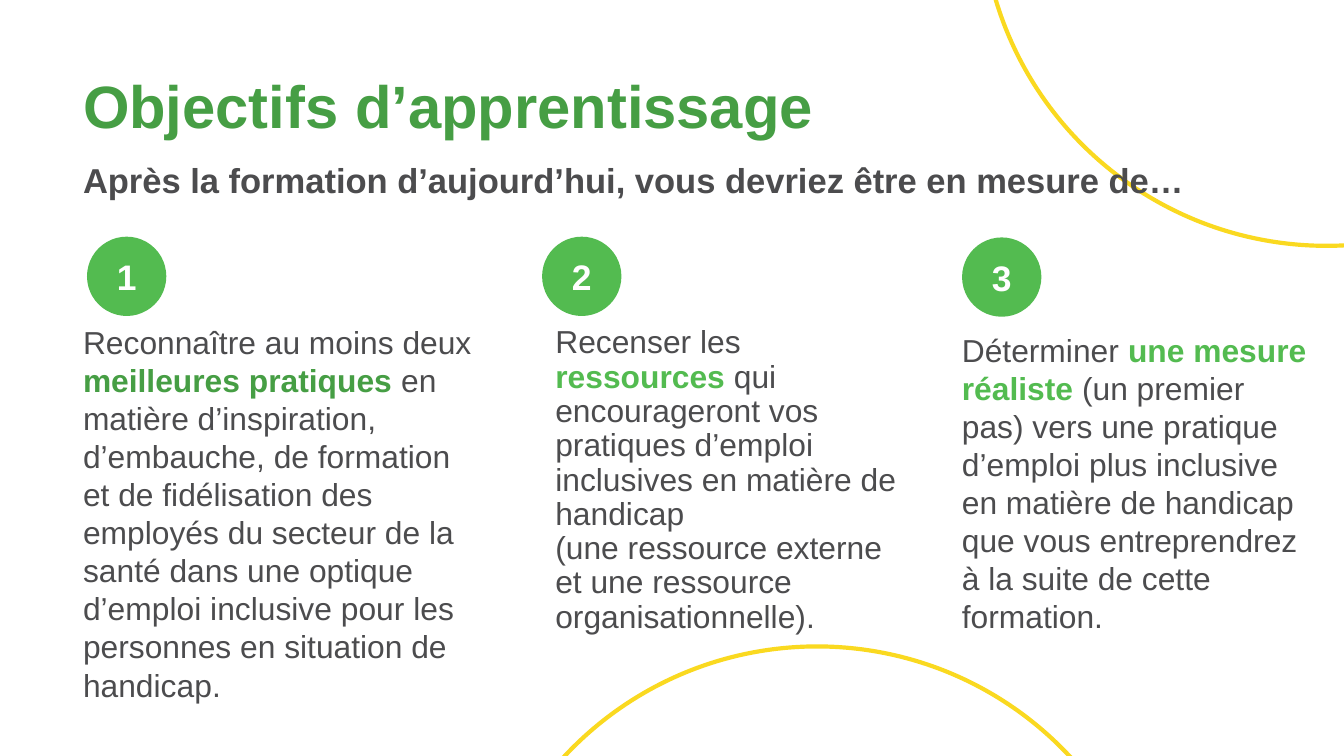
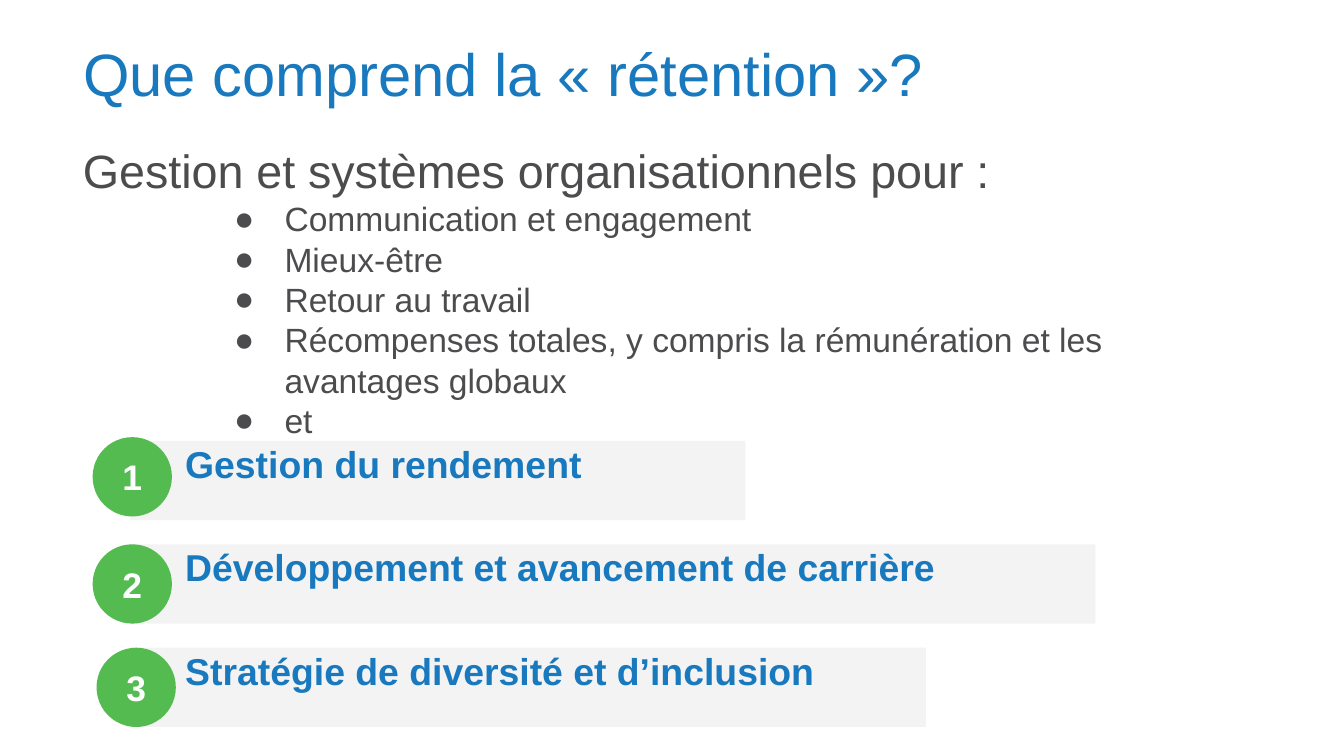
from dataclasses import dataclass

from lxml.etree import SubElement
from pptx import Presentation
from pptx.dml.color import RGBColor as Color
from pptx.enum.shapes import MSO_SHAPE as Preset
from pptx.enum.text import MSO_ANCHOR as Anchor, PP_ALIGN as Align
from pptx.oxml.ns import qn
from pptx.util import Pt


@dataclass(frozen=True)
class Theme:
    font: str = "Arial"
    green: str = "469E44"
    light_green: str = "53BB50"
    blue: str = "1979BE"
    grey: str = "4C4C4E"
    band: str = "F3F3F3"
    yellow: str = "FAD920"
    white: str = "FFFFFF"
    title_size: float = 32
    subtitle_size: float = 18.5
    column_size: float = 17
    lead_size: float = 25
    bullet_size: float = 18
    label_size: float = 20
    number_size: float = 19


THEME = Theme()
LEFT = 37.4
BADGE = 42.5
RING = 370
ROW_TOP, ROW_STEP = 236.2, 55.4
TITLE_LINE = 34.6


# Text helpers
def set_values(target, values):
    for name, value in values.items():
        setattr(target, name, value)


def add_run(paragraph, text, size, color, bold=False):
    for index, line in enumerate(text.split("\n")):
        if index:
            paragraph.add_line_break()
        run = paragraph.add_run()
        run.text = line
        set_values(run.font, {"name": THEME.font, "size": Pt(size), "bold": bold})
        run.font.color.rgb = Color.from_string(color)


def set_frame(frame, margins, anchor=Anchor.TOP):
    left, top, right, bottom = map(Pt, margins)
    set_values(frame, {
        "word_wrap": True, "vertical_anchor": anchor,
        "margin_left": left, "margin_top": top,
        "margin_right": right, "margin_bottom": bottom,
    })


def add_bullet(paragraph, color):
    properties = paragraph._p.get_or_add_pPr()
    properties.set("marL", str(Pt(108)))
    properties.set("indent", str(Pt(-27)))
    bullet_color = SubElement(properties, qn("a:buClr"))
    SubElement(bullet_color, qn("a:srgbClr"), val=color)
    SubElement(properties, qn("a:buFont"), typeface=THEME.font)
    SubElement(properties, qn("a:buChar"), char="●")


def add_text(slide, box, runs, spacing=1.0, anchor=Anchor.TOP, bottom=3.6):
    frame = slide.shapes.add_textbox(*map(Pt, box)).text_frame
    set_frame(frame, (7.2, 3.6, 7.2, bottom), anchor)
    paragraph = frame.paragraphs[0]
    paragraph.line_spacing = spacing
    for run in runs:
        add_run(paragraph, *run)
    return frame


def add_title(slide, text, color, bold=False, lift=0):
    add_text(slide, (LEFT, 19.4, 620.6, 78.5),
             [(text, THEME.title_size, color, bold)],
             0.9, Anchor.MIDDLE, 3.6 + lift)


# Shape helpers
def add_filled(slide, preset, box, color):
    shape = slide.shapes.add_shape(preset, *map(Pt, box))
    shape.shadow.inherit = False
    shape.fill.solid()
    shape.fill.fore_color.rgb = Color.from_string(color)
    shape.line.fill.background()
    return shape


def add_ring(slide, left, top):
    ring = slide.shapes.add_shape(Preset.OVAL, Pt(left), Pt(top), Pt(RING), Pt(RING))
    ring.shadow.inherit = False
    ring.fill.background()
    ring.line.color.rgb = Color.from_string(THEME.yellow)
    ring.line.width = Pt(2.25)


def add_badge(slide, number, left, top):
    badge = add_filled(slide, Preset.OVAL, (left, top, BADGE, BADGE), THEME.light_green)
    set_frame(badge.text_frame, (0, 0, 0, 0), Anchor.MIDDLE)
    paragraph = badge.text_frame.paragraphs[0]
    paragraph.alignment = Align.CENTER
    add_run(paragraph, str(number), THEME.number_size, THEME.white, True)


def add_label_band(slide, text, top, width):
    band = add_filled(slide, Preset.RECTANGLE, (69.8, top, width, BADGE), THEME.band)
    set_frame(band.text_frame, (29.4, 0, 7.2, 0))
    paragraph = band.text_frame.paragraphs[0]
    paragraph.alignment = Align.LEFT
    add_run(paragraph, text, THEME.label_size, THEME.blue, True)


# Slides
def build_objectives(slide):
    add_title(slide, "Objectifs d’apprentissage", THEME.green, bold=True)
    add_ring(slide, 252.7, 346.3)
    add_ring(slide, 525.6, -238.3)

    # Text box, line spacing, badge position, then plain, highlighted and plain text
    columns = [
        ((LEFT, 169.2, 229, 187.2), 1.0, (46.6, 126.8), THEME.green,
         "Reconnaître au moins deux ", "meilleures pratiques",
         " en matière d’inspiration, d’embauche, de formation et de fidélisation "
         "des employés du secteur de la santé dans une optique d’emploi inclusive "
         "pour les personnes en situation de handicap."),
        ((290.4, 171.4, 202.3, 193.7), 0.9, (290.4, 126.8), THEME.light_green,
         "Recenser les ", "ressources ",
         "qui encourageront vos pratiques d’emploi inclusives en matière de "
         "handicap \n(une ressource externe et une ressource organisationnelle)."),
        ((508.2, 173.5, 202.3, 241.9), 1.0, (515.4, 127.2), THEME.light_green,
         "Déterminer ", "une mesure réaliste",
         " (un premier pas) vers une pratique d’emploi plus inclusive en matière "
         "de handicap que vous entreprendrez à la suite de cette formation."),
    ]
    size = THEME.column_size
    for number, column in enumerate(columns, 1):
        box, spacing, position, accent, before, highlight, after = column
        add_text(slide, box, [(before, size, THEME.grey),
                              (highlight, size, accent, True),
                              (after, size, THEME.grey)], spacing)
        add_badge(slide, number, *position)

    add_text(slide, (LEFT, 91.4, 634.3, 27.4),
             [("Après la formation d’aujourd’hui, vous devriez être en mesure de…",
               THEME.subtitle_size, THEME.grey, True)], 0.5)


def build_retention(slide):
    # The title sits half a line above the middle of its box
    add_title(slide, "Que comprend la « rétention »?", THEME.blue, lift=TITLE_LINE)
    frame = add_text(slide, (LEFT, 72.7, 636.5, 169.9),
                     [("Gestion et systèmes organisationnels pour :",
                       THEME.lead_size, THEME.grey)])
    for item in ("Communication et engagement", "Mieux-être", "Retour au travail",
                 "Récompenses totales, y compris la rémunération et les "
                 "avantages globaux", "et"):
        paragraph = frame.add_paragraph()
        add_bullet(paragraph, THEME.grey)
        add_run(paragraph, item, THEME.bullet_size, THEME.grey)

    # Label, band width, badge left and badge rise
    rows = [
        ("Gestion du rendement", 329.6, 49.6, 2),
        ("Développement et avancement de carrière", 517, 49.6, 0),
        ("Stratégie de diversité et d’inclusion", 426.2, 51.7, 0),
    ]
    for index, (label, width, left, rise) in enumerate(rows):
        top = ROW_TOP + index * ROW_STEP
        add_label_band(slide, label, top, width)
        add_badge(slide, index + 1, left, top - rise)


def main():
    presentation = Presentation()
    set_values(presentation, {"slide_width": Pt(720), "slide_height": Pt(405)})
    for build in (build_objectives, build_retention):
        build(presentation.slides.add_slide(presentation.slide_layouts[6]))
    presentation.save("out.pptx")


if __name__ == "__main__":
    main()
